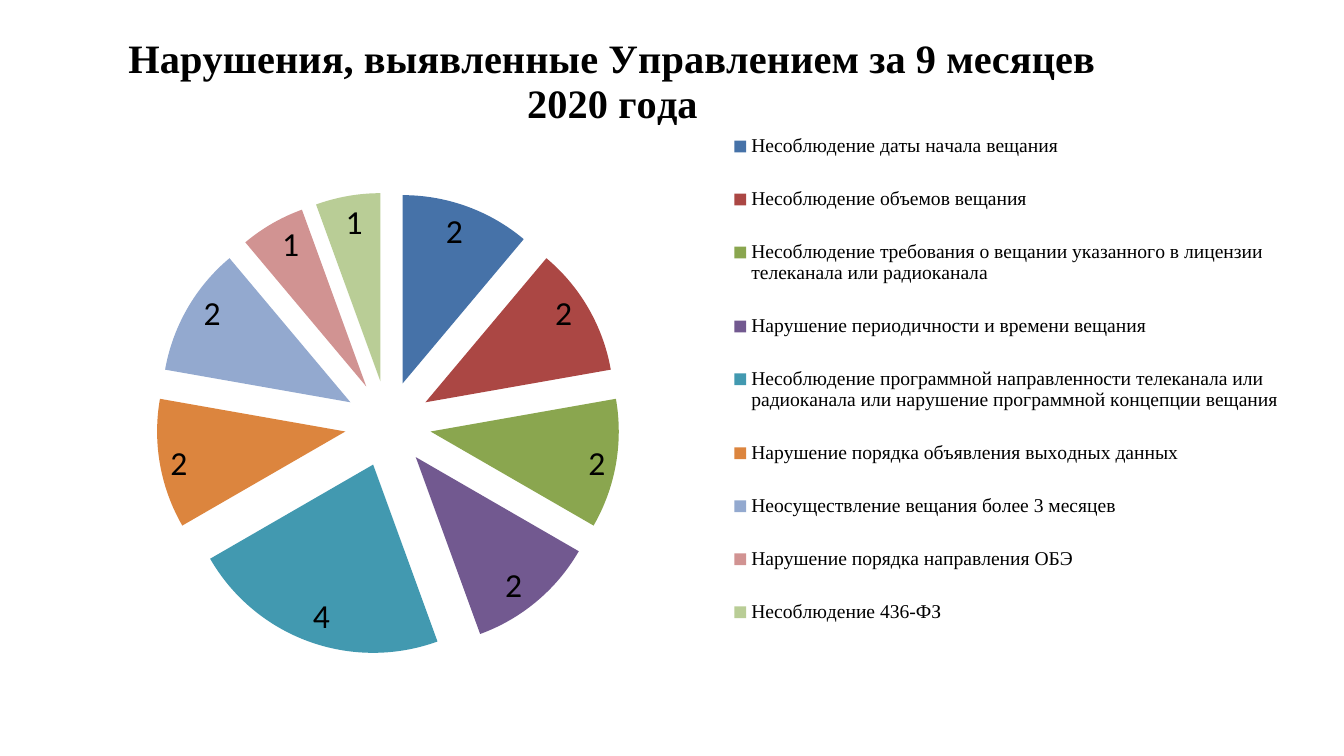
from dataclasses import dataclass
from typing import Optional

from lxml.etree import SubElement
from pptx import Presentation
from pptx.chart.data import CategoryChartData
from pptx.dml.color import RGBColor
from pptx.enum.chart import XL_CHART_TYPE, XL_LABEL_POSITION, XL_LEGEND_POSITION
from pptx.oxml.ns import qn
from pptx.util import Inches, Pt

WIDTH = Inches(10)
HEIGHT = WIDTH * 9 // 16
EXPLOSION = 23
SERIF = "Times New Roman"
COLORS = {
    "text": "000000",
    "blue": "4672A8",
    "red": "AB4744",
    "green": "8AA64F",
    "purple": "725990",
    "teal": "4299B0",
    "orange": "DC853E",
    "light blue": "93A9CF",
    "light red": "D19392",
    "light green": "B9CD96",
}


@dataclass
class Violation:
    name: str
    count: int
    color: str


@dataclass
class Area:
    """Place inside the chart, as shares of the chart's size."""
    x: float
    y: float
    w: Optional[float] = None
    h: Optional[float] = None


VIOLATIONS = [
    Violation("Несоблюдение даты начала вещания", 2, "blue"),
    Violation("Несоблюдение объемов вещания", 2, "red"),
    Violation("Несоблюдение требования о вещании указанного в лицензии "
              "телеканала или радиоканала", 2, "green"),
    Violation("Нарушение периодичности и времени вещания", 2, "purple"),
    Violation("Несоблюдение программной направленности телеканала или "
              "радиоканала или нарушение программной концепции вещания", 4, "teal"),
    Violation("Нарушение порядка объявления выходных данных", 2, "orange"),
    Violation("Неосуществление вещания более 3 месяцев", 2, "light blue"),
    Violation("Нарушение порядка направления ОБЭ", 1, "light red"),
    Violation("Несоблюдение 436-ФЗ", 1, "light green"),
]


def rgb(name: str) -> RGBColor:
    return RGBColor.from_string(COLORS[name])


def set_font(font, size: float, face: str, bold: bool = False) -> None:
    font.size, font.name, font.bold = Pt(size), face, bold
    font.color.rgb = rgb("text")


def place(element, area: Area, position: int, inner: bool = False) -> None:
    """Give a chart part a manual layout as its child at the given position."""
    for old in element.findall(qn("c:layout")):
        element.remove(old)
    layout = SubElement(element, qn("c:layout"))
    manual = SubElement(layout, qn("c:manualLayout"))
    settings = {"layoutTarget": "inner"} if inner else {}
    settings |= {"xMode": "edge", "yMode": "edge", "x": area.x, "y": area.y}
    if area.w is not None:
        settings |= {"w": area.w, "h": area.h}
    for tag, value in settings.items():
        SubElement(manual, qn(f"c:{tag}")).set("val", str(value))
    element.insert(position, layout)


def add_violations_chart(slide):
    data = CategoryChartData()
    data.categories = [violation.name for violation in VIOLATIONS]
    data.add_series("Series 1", [violation.count for violation in VIOLATIONS])
    chart = slide.shapes.add_chart(
        XL_CHART_TYPE.PIE, Inches(0.12), Inches(0.14),
        Inches(9.76), Inches(4.88), data).chart
    set_font(chart.font, 18, "Calibri")
    return chart


def format_slices(chart) -> None:
    plot = chart.plots[0]
    plot.vary_by_categories = True
    series = plot.series[0]
    for index, violation in enumerate(VIOLATIONS):
        fill = series.points[index].format.fill
        fill.solid()
        fill.fore_color.rgb = rgb(violation.color)
    explosion = SubElement(series._element, qn("c:explosion"))
    explosion.set("val", str(EXPLOSION))
    series._element.find(qn("c:tx")).addnext(explosion)

    plot.has_data_labels = True
    labels = plot.data_labels
    labels.show_value = True
    labels.show_percentage = False
    labels.position = XL_LABEL_POSITION.BEST_FIT
    set_font(labels.font, 18, "Calibri")
    plot_area = chart._chartSpace.chart.plotArea
    place(plot_area, Area(0.107, 0.265, 0.353, 0.706), 0, inner=True)


def add_heading(chart) -> None:
    chart.has_title = True
    heading = chart.chart_title
    run = heading.text_frame.paragraphs[0].add_run()
    run.text = "Нарушения, выявленные Управлением за 9 месяцев 2020 года"
    set_font(run.font, 21.6, SERIF, bold=True)
    place(heading._element, Area(0.08, 0.01), 1)


def add_legend(chart) -> None:
    chart.has_legend = True
    legend = chart.legend
    legend.position = XL_LEGEND_POSITION.RIGHT
    legend.include_in_layout = False
    set_font(legend.font, 10.5, SERIF)
    place(legend._element, Area(0.53, 0.13, 0.45, 0.84), 1)


def main() -> None:
    presentation = Presentation()
    presentation.slide_width, presentation.slide_height = WIDTH, HEIGHT
    slide = presentation.slides.add_slide(presentation.slide_layouts[6])

    # Pie of violations with its heading and legend
    chart = add_violations_chart(slide)
    format_slices(chart)
    add_heading(chart)
    add_legend(chart)

    presentation.save("out.pptx")


if __name__ == "__main__":
    main()
